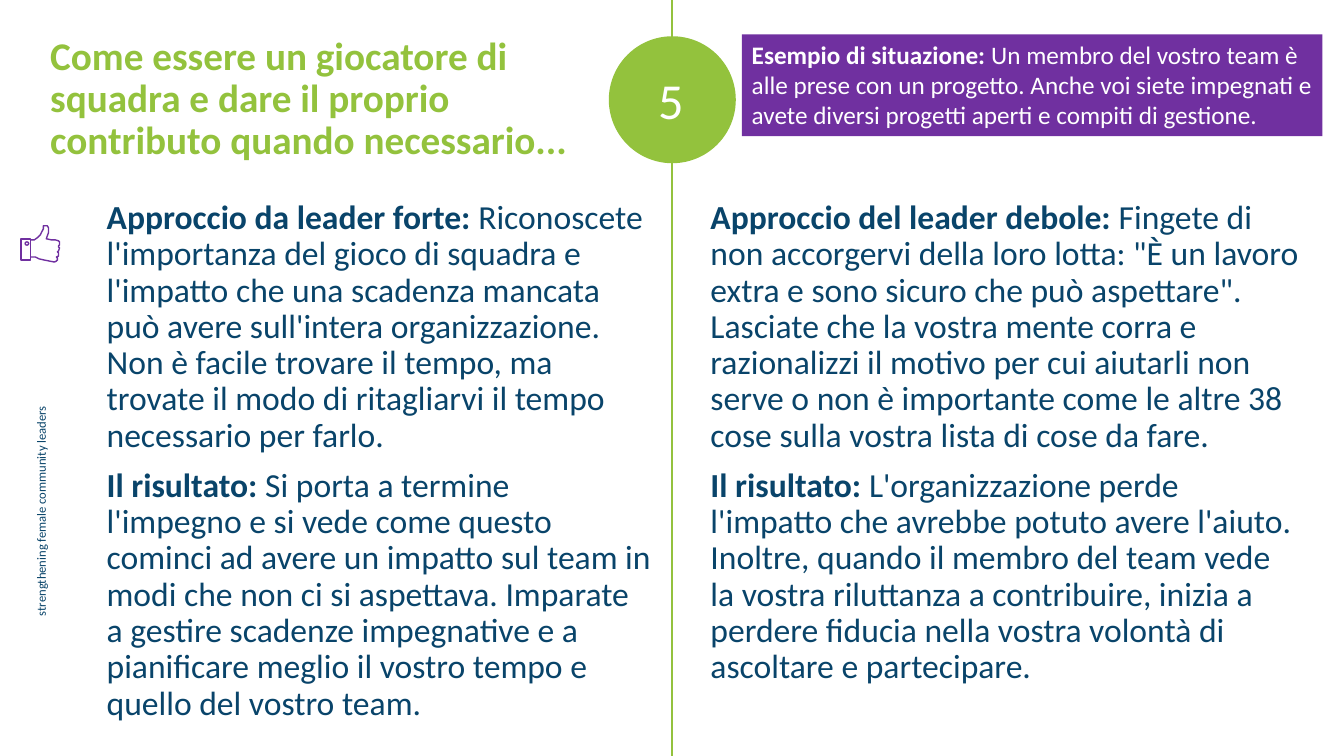
from dataclasses import dataclass

import pptx
import pptx.dml.color
import pptx.enum.shapes
import pptx.enum.text
import pptx.oxml.xmlchemy
import pptx.util

Pt = pptx.util.Pt
RGBColor = pptx.dml.color.RGBColor
MSO_SHAPE = pptx.enum.shapes.MSO_SHAPE
PP_ALIGN = pptx.enum.text.PP_ALIGN

GREEN = RGBColor(0x93, 0xC2, 0x3D)
NAVY = RGBColor(0x09, 0x44, 0x6A)
PURPLE = RGBColor(0x70, 0x30, 0xA0)
WHITE = RGBColor(0xFF, 0xFF, 0xFF)
FONT = "Calibri"
TENTH = Pt(0.1)
SLIDE_W, SLIDE_H = 960, 540


@dataclass(frozen=True)
class Box:
    left: float
    top: float
    width: float
    height: float

    def emu(self) -> tuple:
        return Pt(self.left), Pt(self.top), Pt(self.width), Pt(self.height)


@dataclass(frozen=True)
class Passage:
    lead: str
    rest: str = ""


@dataclass(frozen=True)
class TextBlock:
    box: Box
    passages: tuple[Passage, ...]
    size: float
    color: RGBColor
    line_spacing: float = 0.9
    align: PP_ALIGN = PP_ALIGN.LEFT
    lead_bold: bool = True
    wrap: bool = True
    rotation: float = 0


COLUMN_TOP, COLUMN_H = 139.7, 293

BLOCKS = (
    TextBlock(Box(-54.7, 354.2, 167.8, 18), (Passage("strengthening female community leaders"),),
              9, NAVY, line_spacing=1, lead_bold=False, wrap=False, rotation=270),
    TextBlock(Box(500.4, COLUMN_TOP, 435.6, COLUMN_H), (
        Passage("Approccio del leader debole: ",
                "Fingete di non accorgervi della loro lotta: \"È un lavoro extra e sono sicuro "
                "che può aspettare\". Lasciate che la vostra mente corra e razionalizzi il motivo "
                "per cui aiutarli non serve o non è importante come le altre 38 cose sulla vostra "
                "lista di cose da fare."),
        Passage("Il risultato: ",
                "L'organizzazione perde l'impatto che avrebbe potuto avere l'aiuto. Inoltre, "
                "quando il membro del team vede la vostra riluttanza a contribuire, inizia a "
                "perdere fiducia nella vostra volontà di ascoltare e partecipare."),
    ), 24, NAVY),
    TextBlock(Box(28.8, 22.3, 404.6, 95.8), (
        Passage("Come essere un giocatore di squadra e dare il proprio contributo "
                "quando necessario..."),
    ), 28, GREEN),
    TextBlock(Box(434.2, 50.4, 90.7, 67.7), (Passage("5"),), 36, WHITE,
              align=PP_ALIGN.CENTER, lead_bold=False),
    TextBlock(Box(69.1, COLUMN_TOP, 403.9, COLUMN_H), (
        Passage("Approccio da leader forte: ",
                "Riconoscete l'importanza del gioco di squadra e l'impatto che una scadenza "
                "mancata può avere sull'intera organizzazione. Non è facile trovare il tempo, ma "
                "trovate il modo di ritagliarvi il tempo necessario per farlo."),
        Passage("Il risultato: ",
                "Si porta a termine l'impegno e si vede come questo cominci ad avere un impatto "
                "sul team in modi che non ci si aspettava. Imparate a gestire scadenze impegnative "
                "e a pianificare meglio il vostro tempo e quello del vostro team."),
    ), 24, NAVY),
)

SITUATION = TextBlock(Box(529.9, 24.5, 414.7, 72.7), (
    Passage("Esempio di situazione: ",
            "Un membro del vostro team è alle prese con un progetto. Anche voi siete impegnati "
            "e avete diversi progetti aperti e compiti di gestione."),
), 18, WHITE, line_spacing=1)

CUFF = Box(15.1, 170.6, 6.5, 15.1)
BUTTON = Box(18, 172.8, 2.5, 2.3)
THUMB = (
    (223, 1836), (252, 1836), (281, 1850), (317, 1858), (353, 1865), (389, 1872), (403, 1865),
    (410, 1858), (410, 1843), (403, 1836), (418, 1829), (418, 1807), (410, 1800), (418, 1793),
    (425, 1771), (418, 1764), (418, 1757), (425, 1750), (425, 1728), (418, 1721), (396, 1714),
    (367, 1714), (331, 1706), (338, 1685), (346, 1663), (346, 1627), (338, 1613), (310, 1613),
    (310, 1634), (295, 1663), (288, 1678), (266, 1699), (245, 1714), (223, 1714),
)


def write_text(sp, block: TextBlock) -> None:
    tf = sp.text_frame
    frame_format = {"word_wrap": block.wrap, "vertical_anchor": pptx.enum.text.MSO_ANCHOR.TOP}
    for name, value in frame_format.items():
        setattr(tf, name, value)
    for i, passage in enumerate(block.passages):
        p = tf.add_paragraph() if i else tf.paragraphs[0]
        para_format = {"alignment": block.align, "line_spacing": block.line_spacing,
                       "space_before": Pt(10 if i else 0)}
        for name, value in para_format.items():
            setattr(p, name, value)
        for text, bold in ((passage.lead, block.lead_bold), (passage.rest, False)):
            if not text:
                continue
            r = p.add_run()
            r.text = text
            run_format = {"name": FONT, "size": Pt(block.size), "bold": bold}
            for name, value in run_format.items():
                setattr(r.font, name, value)
            r.font.color.rgb = block.color


def add_text(s, block: TextBlock) -> None:
    sp = s.shapes.add_textbox(*block.box.emu())
    sp.rotation = block.rotation
    write_text(sp, block)


def add_filled(s, kind: MSO_SHAPE, box: Box, color: RGBColor):
    sp = s.shapes.add_shape(kind, *box.emu())
    sp.shadow.inherit = False
    sp.fill.solid()
    sp.fill.fore_color.rgb = color
    sp.line.fill.background()
    return sp


def set_outline(sp, color: RGBColor) -> None:
    sp.shadow.inherit = False
    sp.fill.background()
    sp.line.color.rgb = color
    sp.line.width = Pt(1)


def add_divider(s) -> None:
    ln = s.shapes.add_connector(pptx.enum.shapes.MSO_CONNECTOR.STRAIGHT,
                                Pt(SLIDE_W / 2), Pt(0), Pt(SLIDE_W / 2), Pt(SLIDE_H))
    ln.line.color.rgb = GREEN
    ln.line.width = Pt(1)
    ln._element.spPr.append(pptx.oxml.xmlchemy.OxmlElement("a:effectLst"))


def add_thumbs_up(s) -> None:
    for kind, box in ((MSO_SHAPE.RECTANGLE, CUFF), (MSO_SHAPE.OVAL, BUTTON)):
        set_outline(s.shapes.add_shape(kind, *box.emu()), PURPLE)
    fb = s.shapes.build_freeform(*THUMB[0], scale=TENTH)
    fb.add_line_segments(THUMB[1:], close=False)
    set_outline(fb.convert_to_shape(), PURPLE)


def main() -> None:
    prs = pptx.Presentation()
    prs.slide_width, prs.slide_height = Pt(SLIDE_W), Pt(SLIDE_H)
    s = prs.slides.add_slide(prs.slide_layouts[6])
    add_divider(s)
    add_filled(s, MSO_SHAPE.OVAL, Box(434.9, 25.9, 90.7, 90.7), GREEN)
    for block in BLOCKS:
        add_text(s, block)
    write_text(add_filled(s, MSO_SHAPE.RECTANGLE, SITUATION.box, PURPLE), SITUATION)
    add_thumbs_up(s)
    prs.save("out.pptx")


if __name__ == "__main__":
    main()
